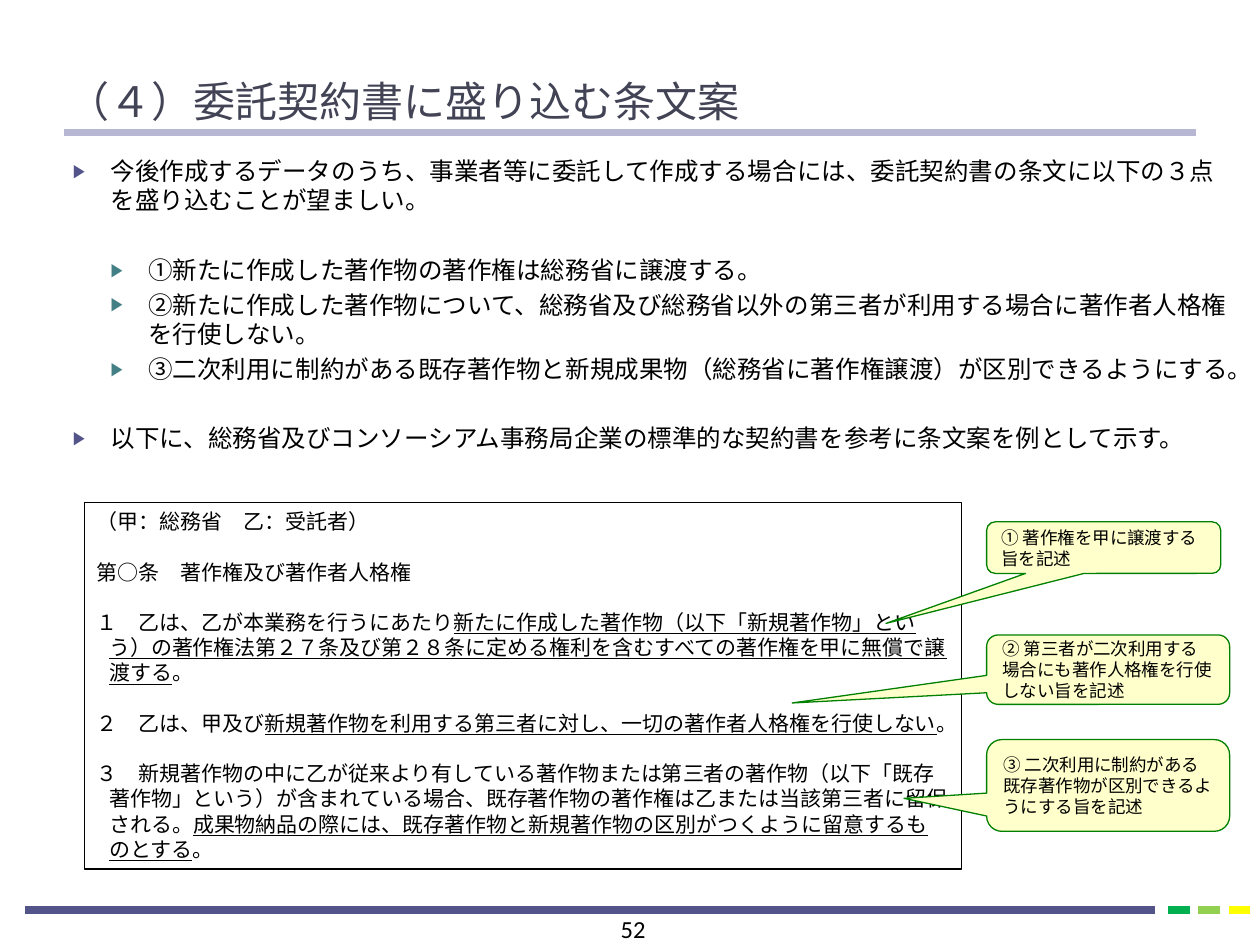
from dataclasses import dataclass
from typing import Any

from lxml.etree import SubElement
from pptx import Presentation
from pptx.dml.color import RGBColor as Rgb
from pptx.enum.shapes import MSO_CONNECTOR as Conn, MSO_SHAPE as Kind
from pptx.enum.text import MSO_ANCHOR as Anchor, PP_ALIGN as Align
from pptx.oxml.ns import qn
from pptx.util import Cm, Pt


@dataclass(frozen=True)
class Theme:
    ink: str = "000000"
    title: str = "424456"
    rule: str = "B7B7D4"
    bar: str = "53548A"
    sub: str = "438086"
    note: str = "FFFFCC"
    edge: str = "008000"
    dashes: tuple = ("00B050", "92D050", "FFFF00")
    head: int = 24
    body: int = 14
    clause: int = 12
    small: int = 10


@dataclass(frozen=True)
class Area:
    left: float
    top: float
    width: float
    height: float

    def cm(self) -> list:
        return [Cm(v) for v in (self.left, self.top, self.width, self.height)]


@dataclass(frozen=True)
class Para:
    """One paragraph: plain text, then underlined text, then a plain ending."""
    plain: str
    under: str = ""
    end: str = ""
    before: float = 0
    level: int = 0


@dataclass(frozen=True)
class Note:
    area: Area
    tip: tuple
    text: str


THEME = Theme()
GAP, BREAK, SKIP = 3, 23, 14.4

POINTS = [
    Para("今後作成するデータのうち、事業者等に委託して作成する場合には、委託契約書の条文に以下の３点を盛り込むことが望ましい。"),
    Para("①新たに作成した著作物の著作権は総務省に譲渡する。", before=BREAK, level=1),
    Para("②新たに作成した著作物について、総務省及び総務省以外の第三者が利用する場合に著作者人格権を行使しない。",
         before=GAP, level=1),
    Para("③二次利用に制約がある既存著作物と新規成果物（総務省に著作権譲渡）が区別できるようにする。",
         before=GAP, level=1),
    Para("以下に、総務省及びコンソーシアム事務局企業の標準的な契約書を参考に条文案を例として示す。", before=BREAK),
]

CLAUSES = [
    Para("（甲：総務省　乙：受託者）"),
    Para("第○条　著作権及び著作者人格権", before=SKIP),
    Para("１　乙は、乙が本業務を行うにあたり",
         "新たに作成した著作物（以下「新規著作物」という）の著作権法第２７条及び第２８条に定める権利を含むすべての著作権を甲に無償で譲渡する",
         "。", SKIP),
    Para("２　乙は、甲及び", "新規著作物を利用する第三者に対し、一切の著作者人格権を行使しない", "。", SKIP),
    Para("３　新規著作物の中に乙が従来より有している著作物または第三者の著作物（以下「既存著作物」という）が含まれている場合、"
         "既存著作物の著作権は乙または当該第三者に留保される。",
         "成果物納品の際には、既存著作物と新規著作物の区別がつくように留意するものとする", "。", SKIP),
]

NOTES = [
    Note(Area(19.89, 10.52, 4.72, 1.04), (-0.93, 1.47), "① 著作権を甲に譲渡する旨を記述"),
    Note(Area(19.89, 12.8, 4.9, 1.4), (-1.3, 0.48), "② 第三者が二次利用する場合にも著作人格権を行使しない旨を記述"),
    Note(Area(19.89, 14.91, 4.9, 1.85), (-0.84, 0.14), "③ 二次利用に制約がある既存著作物が区別できるようにする旨を記述"),
]


def style(item: Any, form: dict) -> None:
    for key, val in form.items():
        setattr(item, key, val)


def face(name: str, size: int) -> dict:
    return {"name": name, "size": Pt(size)}


def stroke(line: Any, color: str, width: float) -> None:
    line.color.rgb = Rgb.from_string(color)
    line.width = Pt(width)


def rule(slide: Any, left: float, right: float, y: float, color: str, width: float) -> None:
    line = slide.shapes.add_connector(Conn.STRAIGHT, Cm(left), Cm(y), Cm(right), Cm(y))
    stroke(line.line, color, width)
    SubElement(line._element.spPr, qn("a:effectLst"))


def indent(para: Any, left: float, hang: float) -> None:
    props = para._p.get_or_add_pPr()
    props.set("marL", str(Cm(left)))
    props.set("indent", str(-Cm(hang)))


def bullet(para: Any, color: str) -> None:
    props = para._p.get_or_add_pPr()
    SubElement(SubElement(props, qn("a:buClr")), qn("a:srgbClr"), val=color)
    SubElement(props, qn("a:buSzPct"), val="76000")
    SubElement(props, qn("a:buFont"), typeface="Arial")
    SubElement(props, qn("a:buChar"), char="▶")


def write(shape: Any, paras: list, font: dict, color: str = THEME.ink,
          align: Any = Align.LEFT, anchor: Any = Anchor.TOP) -> list:
    """Fill the shape with text and return its paragraphs."""
    frame = shape.text_frame
    style(frame, {"word_wrap": True, "vertical_anchor": anchor})
    for i, item in enumerate(paras):
        para = frame.add_paragraph() if i else frame.paragraphs[0]
        style(para, {"alignment": align, "level": item.level})
        if item.before:
            para.space_before = Pt(item.before)
        for text in filter(None, (item.plain, item.under, item.end)):
            run = para.add_run()
            run.text = text
            style(run.font, font)
            run.font.color.rgb = Rgb.from_string(color)
            if text == item.under:
                run.font.underline = True
    return list(frame.paragraphs)


def frame_bars(slide: Any) -> None:
    rule(slide, 0.51, 23.29, 18.34, THEME.bar, 4.5)
    for i, color in enumerate(THEME.dashes):
        left = 23.55 + 0.61 * i
        rule(slide, left, left + 0.43, 18.34, color, 4.5)
    rule(slide, 1.3, 24.1, 2.67, THEME.rule, 4.25)


def clause_box(slide: Any) -> None:
    box = slide.shapes.add_shape(Kind.RECTANGLE, *Area(1.7, 10.13, 17.68, 7.39).cm())
    box.shadow.inherit = False
    box.fill.background()
    stroke(box.line, THEME.ink, 0.75)
    for para in write(box, CLAUSES, face("Arial", THEME.clause)):
        indent(para, 0.25, 0.25)


def callout(slide: Any, note: Note) -> None:
    shape = slide.shapes.add_shape(Kind.ROUNDED_RECTANGULAR_CALLOUT, *note.area.cm())
    shape.shadow.inherit = False
    shape.fill.solid()
    shape.fill.fore_color.rgb = Rgb.from_string(THEME.note)
    stroke(shape.line, THEME.edge, 0.75)
    for i, val in enumerate(note.tip):
        shape.adjustments[i] = val
    write(shape, [Para(note.text)], face("Calibri", THEME.small), anchor=Anchor.MIDDLE)


def point_list(slide: Any) -> None:
    box = slide.shapes.add_textbox(*Area(1.22, 3.02, 23.83, 6.45).cm())
    for para in write(box, POINTS, face("Calibri", THEME.body)):
        indent(para, 0.76 * (para.level + 1), 0.76)
        bullet(para, THEME.sub if para.level else THEME.bar)


def main() -> None:
    deck = Presentation()
    style(deck, {"slide_width": Cm(25.4), "slide_height": Cm(19.05)})
    slide = deck.slides.add_slide(deck.slide_layouts[6])
    frame_bars(slide)
    page = slide.shapes.add_textbox(*Area(10.01, 18.31, 5.51, 1.02).cm())
    write(page, [Para("52")], face("Calibri", THEME.body), align=Align.CENTER)
    clause_box(slide)
    for note in NOTES:
        callout(slide, note)
    title = slide.shapes.add_textbox(*Area(1.12, 0.46, 22.86, 2.21).cm())
    write(title, [Para("（４）委託契約書に盛り込む条文案")], face("TeX Gyre Bonum", THEME.head),
          THEME.title, anchor=Anchor.BOTTOM)
    point_list(slide)
    deck.save("out.pptx")


if __name__ == "__main__":
    main()
